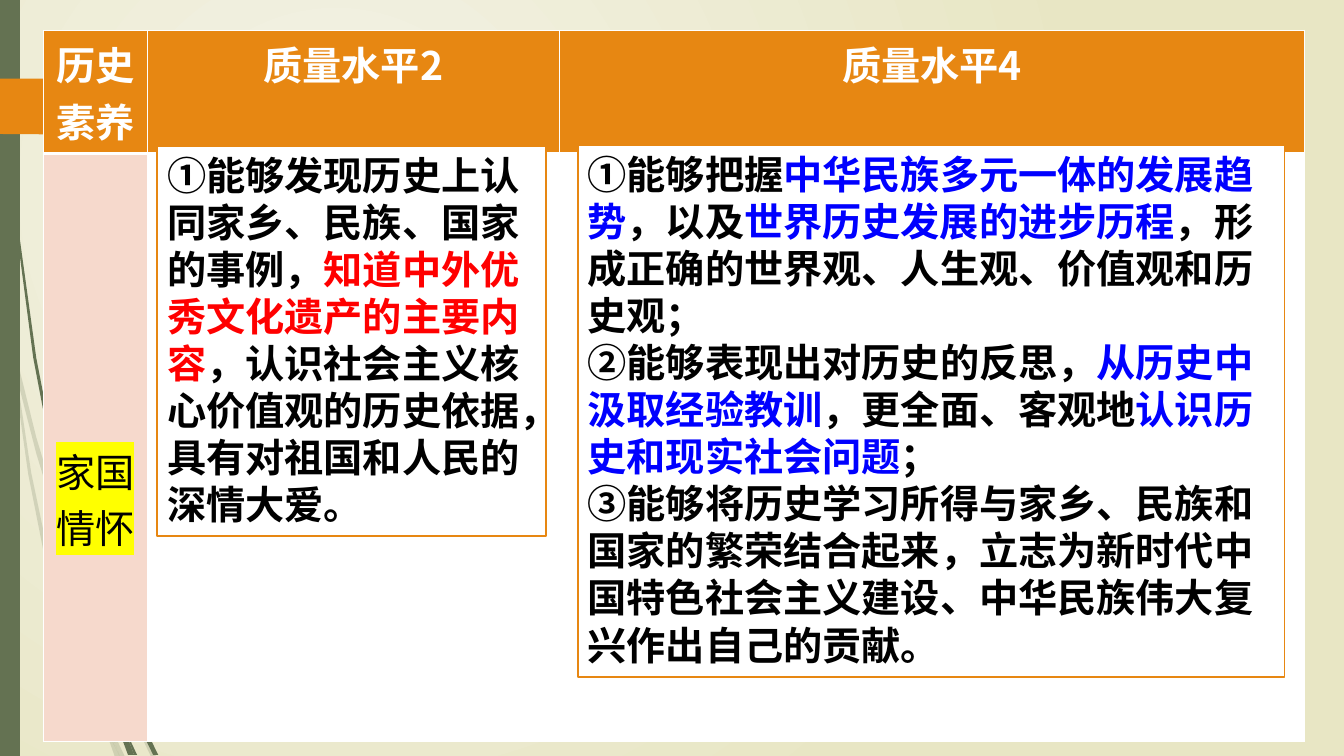
from lxml import etree
from pptx import Presentation
from pptx.dml.color import RGBColor as Rgb
from pptx.enum.shapes import MSO_SHAPE as Kind
from pptx.enum.text import MSO_ANCHOR as Anchor, PP_ALIGN as Align
from pptx.oxml import parse_xml
from pptx.oxml.ns import qn
from pptx.util import Inches, Pt

FONT = "Noto Sans CJK SC"
GREEN, ORANGE, PINK = "647252", "E78712", "F6D9CC"
WHITE, BLACK, RED, BLUE = "FFFFFF", "000000", "FF0000", "0000FF"
YELLOW = "FFFF00"
NS = 'xmlns:a="http://schemas.openxmlformats.org/drawingml/2006/main"'

HEADS = ["历史素养", "质量水平2", "质量水平4"]
TOPIC = "家国情怀"
COLS = [1.03, 4.09, 7.39]
ROWS = [1.22, 5.83]

BOXES = [
    ((1.56, 1.45, 3.86, 3.87), [
        [("①能够发现历史上认同家乡、民族、国家的事例，", BLACK),
         ("知道中外优秀文化遗产的主要内容", RED),
         ("，认识社会主义核心价值观的历史依据，具有对祖国和人民的深情大爱。", BLACK)],
    ]),
    ((5.73, 1.44, 7.01, 5.28), [
        [("①能够把握", BLACK),
         ("中华民族多元一体的发展趋势", BLUE),
         ("，以及", BLACK),
         ("世界历史发展的进步历程", BLUE),
         ("，形成正确的世界观、人生观、价值观和历史观；", BLACK)],
        [("②能够表现出对历史的反思，", BLACK),
         ("从历史中汲取经验教训", BLUE),
         ("，更全面、客观地", BLACK),
         ("认识历史和现实社会问题", BLUE),
         ("；", BLACK)],
        [("③能够将历史学习所得与家乡、民族和国家的繁荣结合起来，立志为新时代中国特色社会主义建设、"
          "中华民族伟大复兴作出自己的贡献。", BLACK)],
    ]),
]

BLADES = [
    (20, [(0.14, 3.45), (0.36, 4.34), (0.62, 5.2), (0.85, 5.86), (0.84, 5.99),
          (0.58, 5.22), (0.36, 4.5), (0.17, 3.76)]),
    (20, [(0.88, 5.96), (1.27, 6.92), (1.55, 7.51), (1.5, 7.51), (1.23, 6.94),
          (0.88, 6.1)]),
    (20, [(1.05, 7.11), (1.24, 7.51), (1.19, 7.51)]),
    (20, [(0.11, 3.5), (0.17, 3.76), (0.31, 4.69), (0.47, 5.45), (0.7, 6.19),
          (0.93, 6.83), (1.01, 7.14), (0.92, 6.93), (0.65, 6.21), (0.43, 5.46),
          (0.28, 4.7)]),
    (20, [(1.01, 7.14), (1.19, 7.51), (1.14, 7.51)]),
    (20, [(0.93, 6.83), (1.05, 7.11), (1.19, 7.51), (1.01, 7.14)]),
    (100, [(0.03, 0), (0.04, 0), (0.08, 1.09), (0.19, 2.32), (0.36, 3.55),
           (0.55, 4.53), (0.57, 4.81), (0.33, 3.55), (0.17, 2.33), (0.07, 1.1)]),
    (100, [(1.1, 6.41), (1.36, 7.06), (1.57, 7.49), (1.52, 7.49), (1.32, 7.08),
           (1.11, 6.56)]),
    (100, [(1.22, 7.19), (1.36, 7.49), (1.33, 7.49)]),
    (100, [(1.17, 7.22), (1.31, 7.49), (1.27, 7.49)]),
    (100, [(1.1, 6.91), (1.22, 7.19), (1.33, 7.49), (1.3, 7.49), (1.17, 7.22)]),
]
ARROW = [(0, 0.78), (1.46, 0.78), (1.48, 0.79), (1.74, 1.06), (1.48, 1.33),
         (1.46, 1.34), (0, 1.33)]


def paint(fill, tone):
    fill.solid()
    fill.fore_color.rgb = Rgb.from_string(tone)


def outline(slide, pts, tone, alpha=100):
    pts = [(Inches(x), Inches(y)) for x, y in pts]
    path = slide.shapes.build_freeform(*pts[0])
    path.add_line_segments(pts[1:], close=True)
    form = path.convert_to_shape()
    form.shadow.inherit = False
    paint(form.fill, tone)
    form.line.fill.background()
    if alpha < 100:
        hue = form._element.spPr.find(qn("a:solidFill"))[0]
        etree.SubElement(hue, qn("a:alpha")).set("val", str(alpha * 1000))


def write(par, text, tone, bold=True, mark=None):
    run = par.add_run()
    run.text = text
    font = run.font
    font.size, font.bold, font.name = Pt(28), bold, FONT
    font.color.rgb = Rgb.from_string(tone)
    latin = run._r.rPr.find(qn("a:latin"))
    latin.addnext(parse_xml(f'<a:ea {NS} typeface="{FONT}"/>'))
    if mark:
        latin.addprevious(parse_xml(
            f'<a:highlight {NS}><a:srgbClr val="{mark}"/></a:highlight>'))


def frame(cell, base):
    props = cell._tc.get_or_add_tcPr()
    for spot, (side, width) in enumerate(zip("LRTB", (1, 1, 1, base))):
        props.insert(spot, parse_xml(
            f'<a:ln{side} {NS} w="{Pt(width)}"><a:solidFill>'
            f'<a:srgbClr val="{WHITE}"/></a:solidFill></a:ln{side}>'))


def backdrop(slide):
    fill = slide.background.fill
    fill.gradient()
    for stop, tone in zip(fill.gradient_stops, ("F3F2E6", "E8E6C4")):
        stop.color.rgb = Rgb.from_string(tone)
    lin = next(slide._element.iter(qn("a:lin")))
    lin.getparent().replace(lin, parse_xml(
        f'<a:path {NS} path="circle"><a:fillToRect l="50000" t="50000" '
        'r="100000" b="100000"/></a:path>'))


def grid(slide):
    area = map(Inches, (0.43, 0.3, sum(COLS), sum(ROWS)))
    table = slide.shapes.add_table(2, 3, *area).table
    for col, width in zip(table.columns, COLS):
        col.width = Inches(width)
    for row, height in zip(table.rows, ROWS):
        row.height = Inches(height)
    for i, head in enumerate(HEADS):
        top, low = table.cell(0, i), table.cell(1, i)
        paint(top.fill, ORANGE)
        paint(low.fill, WHITE if i else PINK)
        frame(top, 3)
        frame(low, 1)
        par = top.text_frame.paragraphs[0]
        par.alignment = Align.CENTER
        write(par, head, WHITE)
    topic = table.cell(1, 0)
    topic.margin_top = Inches(2.86)
    par = topic.text_frame.paragraphs[0]
    par.alignment = Align.CENTER
    write(par, TOPIC, BLACK, False, YELLOW)


def panel(slide, area, texts):
    box = slide.shapes.add_shape(Kind.RECTANGLE, *map(Inches, area))
    box.shadow.inherit = False
    paint(box.fill, WHITE)
    paint(box.line.fill, ORANGE)
    box.line.width = Pt(1.25)
    body = box.text_frame
    body.word_wrap = True
    body.vertical_anchor = Anchor.TOP
    for i, parts in enumerate(texts):
        par = body.add_paragraph() if i else body.paragraphs[0]
        par.alignment = Align.LEFT
        par.line_spacing = 1.0
        for text, tone in parts:
            write(par, text, tone)


def main():
    deck = Presentation()
    deck.slide_width, deck.slide_height = Inches(13.33), Inches(7.5)
    slide = deck.slides.add_slide(deck.slide_layouts[6])
    backdrop(slide)
    for alpha, pts in BLADES:
        outline(slide, pts, GREEN, alpha)
    outline(slide, [(0, 0), (0.2, 0), (0.2, 7.5), (0, 7.5)], GREEN)
    outline(slide, ARROW, ORANGE)
    grid(slide)
    for area, texts in BOXES:
        panel(slide, area, texts)
    deck.save("out.pptx")


if __name__ == "__main__":
    main()
